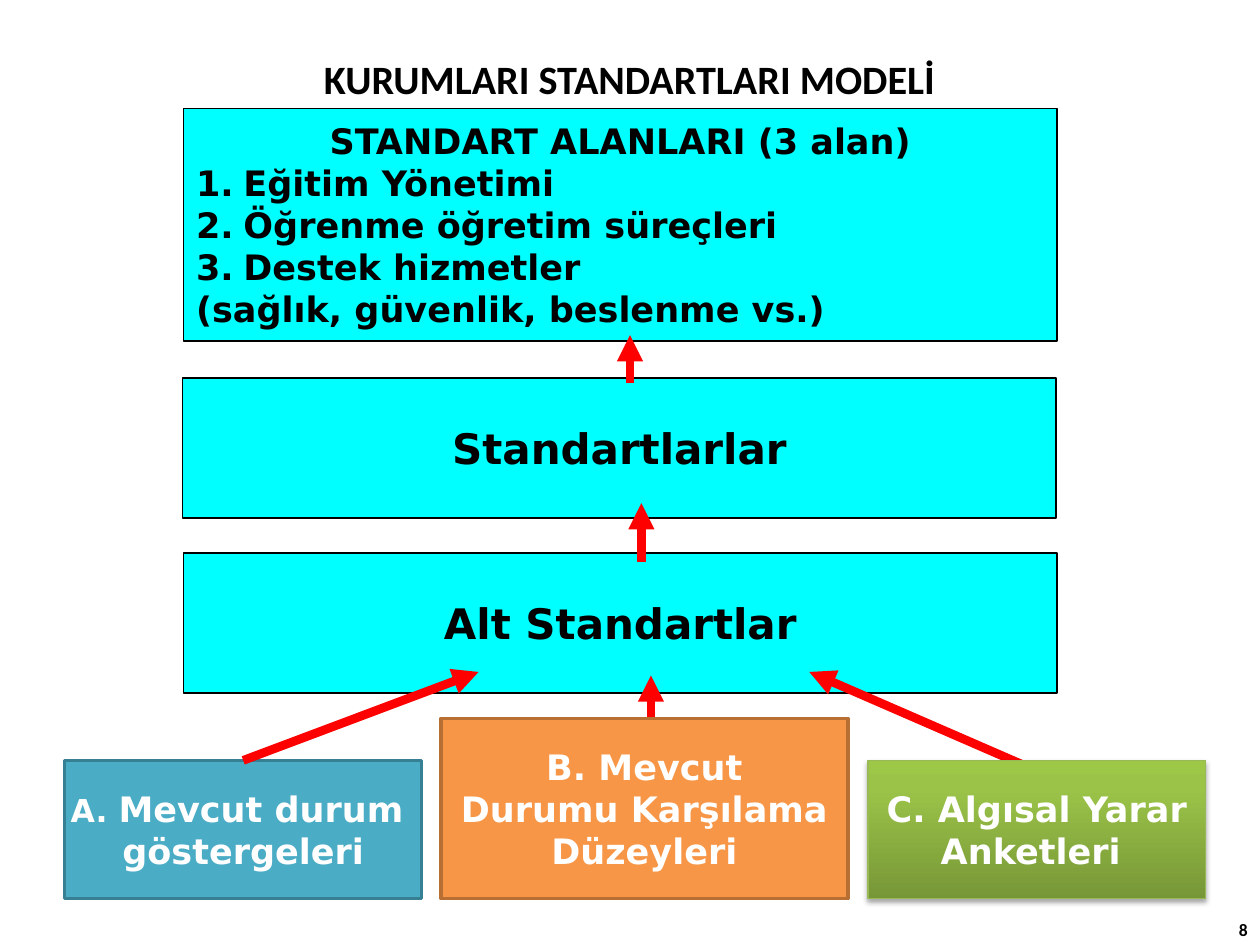
from lxml.etree import SubElement
from pptx import Presentation
from pptx.dml.color import RGBColor
from pptx.enum.shapes import MSO_CONNECTOR, MSO_SHAPE
from pptx.enum.text import MSO_ANCHOR, PP_ALIGN
from pptx.oxml import parse_xml
from pptx.oxml.ns import nsdecls, qn
from pptx.util import Pt

BLACK = RGBColor(0x00, 0x00, 0x00)
WHITE = RGBColor(0xFF, 0xFF, 0xFF)
CYAN = RGBColor(0x00, 0xFF, 0xFF)
RED = RGBColor(0xFF, 0x00, 0x00)
ORANGE = RGBColor(0xF7, 0x96, 0x46)
DARK_ORANGE = RGBColor(0xB7, 0x6F, 0x34)
TEAL = RGBColor(0x4B, 0xAC, 0xC6)
DARK_TEAL = RGBColor(0x37, 0x7F, 0x92)
GREEN = RGBColor(0x9B, 0xC3, 0x48)
GREEN_EDGE = RGBColor(0x98, 0xB9, 0x55)

prs = Presentation()
prs.slide_width, prs.slide_height = Pt(720), Pt(540)
slide = prs.slides.add_slide(prs.slide_layouts[6])


def write(shape, text, size=20, color=BLACK, font="DejaVu Sans",
          align=PP_ALIGN.CENTER, anchor=MSO_ANCHOR.MIDDLE, wrap=False):
    """Fill a shape with bold text, one paragraph per line."""
    frame = shape.text_frame
    frame.word_wrap = wrap
    frame.vertical_anchor = anchor
    frame.text = text
    for paragraph in frame.paragraphs:
        paragraph.alignment = align
        for run in paragraph.runs:
            run.font.name = font
            run.font.size = Pt(size)
            run.font.bold = True
            run.font.color.rgb = color
    return frame.paragraphs


def add_arrow(x1, y1, x2, y2):
    arrow = slide.shapes.add_connector(
        MSO_CONNECTOR.STRAIGHT, Pt(x1), Pt(y1), Pt(x2), Pt(y2))
    arrow.line.color.rgb = RED
    arrow.line.width = Pt(5)
    SubElement(arrow.line._get_or_add_ln(), qn("a:tailEnd"), type="triangle")
    SubElement(arrow._element.spPr, qn("a:effectLst"))
    return arrow


# Page number and title
page_number = slide.shapes.add_textbox(Pt(570), Pt(522), Pt(150), Pt(18))
write(page_number, "8", size=10, font="Calibri", align=PP_ALIGN.RIGHT, wrap=True)
title = slide.shapes.add_textbox(Pt(36), Pt(21.6), Pt(648), Pt(40.3))
write(title, "KURUMLARI STANDARTLARI MODELİ", size=23, font="Calibri",
      anchor=MSO_ANCHOR.BOTTOM, wrap=True)

# Boxes: left, top, width, height, fill, edge, edge width
places = {
    "areas": (105, 62, 499, 133, CYAN, BLACK, 0.75),
    "standards": (104.5, 216, 499, 80, CYAN, BLACK, 0.75),
    "substandards": (105, 316, 499, 80, CYAN, BLACK, 0.75),
    "arrows up": None,
    "fulfilment": (252, 410.5, 232.5, 103, ORANGE, DARK_ORANGE, 2),
    "indicators": (37, 434.5, 204, 79, TEAL, DARK_TEAL, 2),
    "arrows slanted": None,
    "surveys": (496, 434.5, 193, 79, GREEN, GREEN_EDGE, 0.75),
}
boxes = {}
for part, place in places.items():
    if part == "arrows up":
        add_arrow(372, 414, 372, 386)
        add_arrow(366.5, 321, 366.5, 287.5)
    elif part == "arrows slanted":
        add_arrow(141, 433.5, 273.5, 384).begin_connect(boxes["indicators"], 0)
        add_arrow(604, 445.5, 462.5, 384)
    else:
        left, top, width, height, fill, edge, edge_width = place
        box = slide.shapes.add_shape(
            MSO_SHAPE.RECTANGLE, Pt(left), Pt(top), Pt(width), Pt(height))
        box.fill.solid()
        box.fill.fore_color.rgb = fill
        box.line.color.rgb = edge
        box.line.width = Pt(edge_width)
        box.shadow.inherit = False
        boxes[part] = box
add_arrow(360, 219, 360, 191.5)

# Standard areas: heading, numbered list and a closing remark
heading, *areas = write(
    boxes["areas"],
    "STANDART ALANLARI (3 alan)\nEğitim Yönetimi\nÖğrenme öğretim süreçleri\n"
    "Destek hizmetler\n(sağlık, güvenlik, beslenme vs.)", wrap=True)
for area in areas:
    area.alignment = PP_ALIGN.LEFT
    properties = area._p.get_or_add_pPr()
    properties.set("marL", str(Pt(27)))
    properties.set("indent", str(-Pt(27)))
    if area is not areas[-1]:
        SubElement(properties, qn("a:buFont"), typeface="+mj-lt")
        SubElement(properties, qn("a:buAutoNum"), type="arabicPeriod")

# Other box texts
write(boxes["standards"], "Standartlarlar", size=24)
write(boxes["substandards"], "Alt Standartlar", size=24)
write(boxes["fulfilment"], "B. Mevcut\n Durumu Karşılama \nDüzeyleri", color=WHITE)
write(boxes["surveys"], "C. Algısal Yarar\nAnketleri ", color=WHITE)
first_line = write(boxes["indicators"], "A. \ngöstergeleri", color=WHITE)[0]
letter = first_line.runs[0]
letter.font.size = Pt(18)
rest = first_line.add_run()
rest.text = "Mevcut durum "
rest.font.name = "DejaVu Sans"
rest.font.size = Pt(20)
rest.font.bold = True
rest.font.color.rgb = WHITE

# Gradient and soft shadow of the survey box
survey_look = boxes["surveys"]._element.spPr
stops = "".join(
    f'<a:gs pos="{percent * 1000}"><a:srgbClr val="{color}"/></a:gs>'
    for percent, color in [(0, "779737"), (80, "9BC348"), (100, "9DC746")])
survey_look.replace(survey_look.find(qn("a:solidFill")), parse_xml(
    f'<a:gradFill {nsdecls("a")} rotWithShape="1"><a:gsLst>{stops}</a:gsLst>'
    '<a:lin ang="16200000" scaled="0"/></a:gradFill>'))
survey_look.find(qn("a:effectLst")).append(parse_xml(
    f'<a:outerShdw {nsdecls("a")} blurRad="{Pt(3.1)}" dist="{Pt(1.8)}" '
    'dir="5400000" rotWithShape="0"><a:srgbClr val="000000">'
    '<a:alpha val="35000"/></a:srgbClr></a:outerShdw>'))

prs.save("out.pptx")
